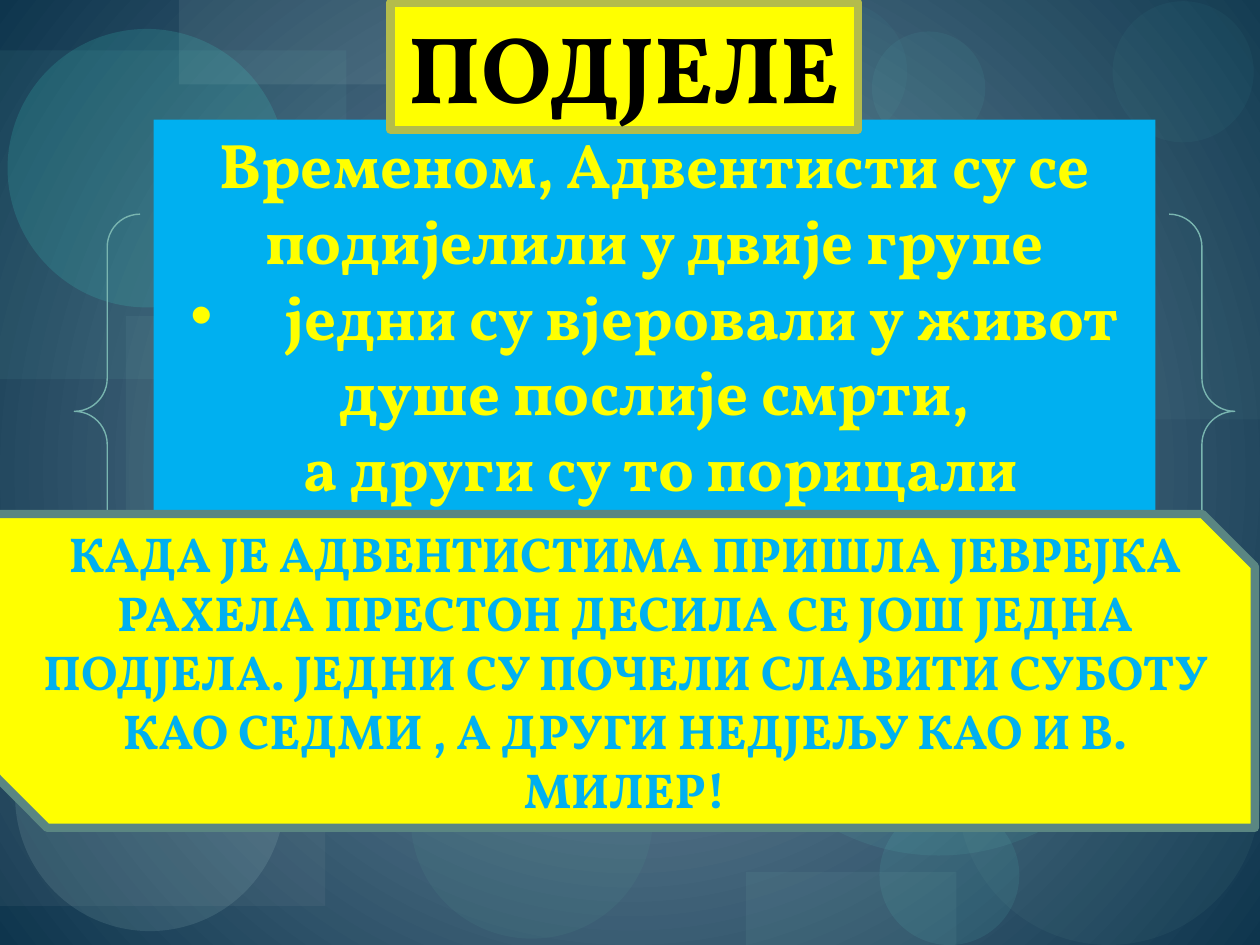
from lxml import etree
from pptx import Presentation, util as u
from pptx.dml.color import RGBColor
from pptx.enum import shapes, text
from pptx.oxml.ns import qn

COLUMNS, ROWS = 100, 75
RECTANGLE = shapes.MSO_SHAPE.RECTANGLE
OVAL = shapes.MSO_SHAPE.OVAL

YELLOW = RGBColor(0xFF, 0xFF, 0x00)
SKY = RGBColor(0x00, 0xB0, 0xF0)
BLACK = RGBColor(0x00, 0x00, 0x00)
OLIVE = RGBColor(0xB4, 0xBC, 0x4C)
TEAL = RGBColor(0x5A, 0x86, 0x82)
HAZE = RGBColor(0x7B, 0x96, 0xAA)
NAVY = RGBColor(0x0E, 0x35, 0x4D)
SAGE = RGBColor(0x79, 0xB5, 0xB0)
FERN = RGBColor(0x54, 0x97, 0x91)
MOSS = RGBColor(0x70, 0xA3, 0x9E)
AQUA = RGBColor(0x65, 0xE8, 0xDC)
TURQUOISE = RGBColor(0x44, 0xEA, 0xDC)
MINT = RGBColor(0x97, 0xDC, 0xD6)
GREY = RGBColor(0xB2, 0xB7, 0xBA)
PALE = RGBColor(0xC1, 0xE8, 0xE4)
CYAN = RGBColor(0x77, 0xD6, 0xCE)
MIST = RGBColor(0xBE, 0xD7, 0xD4)
LAGOON = RGBColor(0x61, 0xCD, 0xC4)

# Kind, left, top, width, height (grid units), colour, opacity in percent
DECORATIONS = [
    (RECTANGLE, 10, 25.1, 30, 23.3, SAGE, 9),
    (OVAL, 32.6, 55.5, 19.2, 19, FERN, 13),
    (RECTANGLE, 57.5, 0, 42.5, 33.3, SAGE, 6),
    (RECTANGLE, 0, 45, 25.8, 26.9, GREY, 8),
    (OVAL, 45.7, 26.1, 23.8, 23.8, MOSS, 8),
    (OVAL, 69.8, 63.9, 11.1, 11.1, AQUA, 9),
    (OVAL, 1.2, 52.5, 21.4, 21.4, PALE, 12),
    (OVAL, 22.1, 50.1, 11.2, 11.2, AQUA, 9),
    (OVAL, 45.6, 50.6, 16.6, 15.3, TURQUOISE, 8),
    (RECTANGLE, 0, 4, 27.5, 26.1, CYAN, 7),
    (RECTANGLE, 14.2, 0, 16.7, 6.7, MIST, 10),
    (OVAL, 0.6, 2.3, 22.1, 22.1, TURQUOISE, 15),
    (OVAL, 0.8, 43.3, 9.7, 9.7, MINT, 10),
    (OVAL, 36.8, 5.1, 17.4, 17.4, TURQUOISE, 8),
    (OVAL, 56.8, 32.5, 35.4, 35.4, LAGOON, 10),
    (OVAL, 60.8, 0.1, 11.2, 11.2, AQUA, 4),
    (OVAL, 76, 51, 24, 24, MOSS, 8),
    (OVAL, 17.5, 40.5, 13.1, 13.1, MINT, 10),
    (OVAL, 69.2, 2.5, 9, 9, AQUA, 6),
    (OVAL, 88.3, 0.1, 11.2, 11.2, AQUA, 4),
    (RECTANGLE, 59.2, 69.2, 16.7, 5.8, SAGE, 10),
    (OVAL, 32.9, 0.1, 11.2, 11.2, AQUA, 4),
]

GROUPS = [
    "Временом, Адвентисти су се",
    "подијелили у двије групе",
    "једни су вјеровали у живот",
    "душе послије смрти,",
    " а други су то порицали",
]
BULLETED_LINE = 2
SABBATH = (
    "КАДА ЈЕ АДВЕНТИСТИМА ПРИШЛА ЈЕВРЕЈКА РАХЕЛА ПРЕСТОН ДЕСИЛА СЕ ЈОШ ЈЕДНА "
    "ПОДЈЕЛА. ЈЕДНИ СУ ПОЧЕЛИ СЛАВИТИ СУБОТУ КАО СЕДМИ , А ДРУГИ НЕДЈЕЉУ "
    "КАО И В. МИЛЕР!"
)


def write(shape, lines, *, size, color, font="Vollkorn",
          anchor=text.MSO_ANCHOR.TOP):
    """Fill a shape of fixed size with bold centred paragraphs."""
    frame = shape.text_frame
    frame.text = "\n".join(lines)
    frame.word_wrap = True
    frame.auto_size = text.MSO_AUTO_SIZE.NONE
    frame.vertical_anchor = anchor
    for paragraph in frame.paragraphs:
        paragraph.alignment = text.PP_ALIGN.CENTER
        for run in paragraph.runs:
            run.font.name = font
            run.font.size = u.Pt(size)
            run.font.bold = True
            run.font.color.rgb = color


def add_bullet(paragraph, indent):
    properties = paragraph._p.get_or_add_pPr()
    properties.set("marL", str(u.Inches(indent)))
    properties.set("indent", str(-u.Inches(indent)))
    etree.SubElement(properties, qn("a:buFont"), typeface="Arial")
    etree.SubElement(properties, qn("a:buChar"), char="•")


class SlideBuilder:
    """Holds the grid, the border weight and the current slide."""

    border_width = 4.72

    def __init__(self, presentation):
        self.column = presentation.slide_width / COLUMNS
        self.row = presentation.slide_height / ROWS
        self.slide = presentation.slides.add_slide(presentation.slide_layouts[5])

    def box(self, left, top, width, height):
        return [round(length) for length in (
            left * self.column, top * self.row,
            width * self.column, height * self.row)]

    def background(self, centre, edge):
        fill = self.slide.background.fill
        fill.gradient()
        for stop, color in zip(fill.gradient_stops, (centre, edge)):
            stop.color.rgb = color
        gradient = self.slide.element.find(".//" + qn("a:gradFill"))
        gradient.remove(gradient.find(qn("a:lin")))
        route = etree.SubElement(gradient, qn("a:path"))
        route.set("path", "circle")
        etree.SubElement(route, qn("a:fillToRect"),
                         l="50000", t="50000", r="50000", b="50000")

    def paint(self, shape, fill=None, line=None, width=border_width):
        if fill is None:
            shape.fill.background()
        else:
            shape.fill.solid()
            shape.fill.fore_color.rgb = fill
        if line is None:
            shape.line.fill.background()
        else:
            shape.line.color.rgb = line
            shape.line.width = u.Pt(width)

    def shape(self, kind, *place, opacity=100, **style):
        shape = self.slide.shapes.add_shape(kind, *self.box(*place))
        shape.shadow.inherit = False
        self.paint(shape, **style)
        if opacity < 100:
            color = shape.element.spPr.find(".//" + qn("a:srgbClr"))
            etree.SubElement(color, qn("a:alpha"), val=str(opacity * 1000))
        return shape

    def title(self, words, *place, size, color, **style):
        """Format the title placeholder and bring it in front."""
        title = self.slide.shapes.title
        title.left, title.top, title.width, title.height = self.box(*place)
        self.paint(title, **style)
        write(title, [words], size=size, color=color)
        self.slide.shapes._spTree.append(title.element)


def main():
    presentation = Presentation()
    presentation.slide_width = u.Inches(10)
    presentation.slide_height = u.Inches(7.5)
    builder = SlideBuilder(presentation)
    builder.background(HAZE, NAVY)

    for kind, left, top, width, height, color, opacity in DECORATIONS:
        builder.shape(kind, left, top, width, height, fill=color, opacity=opacity)

    builder.shape(shapes.MSO_SHAPE.DOUBLE_BRACE, 5.9, 17, 92.1, 31.3,
                  line=SAGE, width=0.79)
    groups = builder.shape(RECTANGLE, 12.2, 9.5, 79.5, 31.3, fill=SKY)
    write(groups, GROUPS, size=36, color=YELLOW)
    add_bullet(groups.text_frame.paragraphs[BULLETED_LINE], 0.75)

    builder.title("ПОДЈЕЛЕ", 31, 0.2, 37.1, 10.1, size=54, color=BLACK,
                  fill=YELLOW, line=OLIVE)

    sabbath = builder.shape(shapes.MSO_SHAPE.SNIP_2_DIAG_RECTANGLE,
                            -0.4, 40.8, 100, 24.9, fill=YELLOW, line=TEAL)
    write(sabbath, [SABBATH], size=28, color=SKY, anchor=text.MSO_ANCHOR.MIDDLE)

    presentation.save("out.pptx")


if __name__ == "__main__":
    main()
